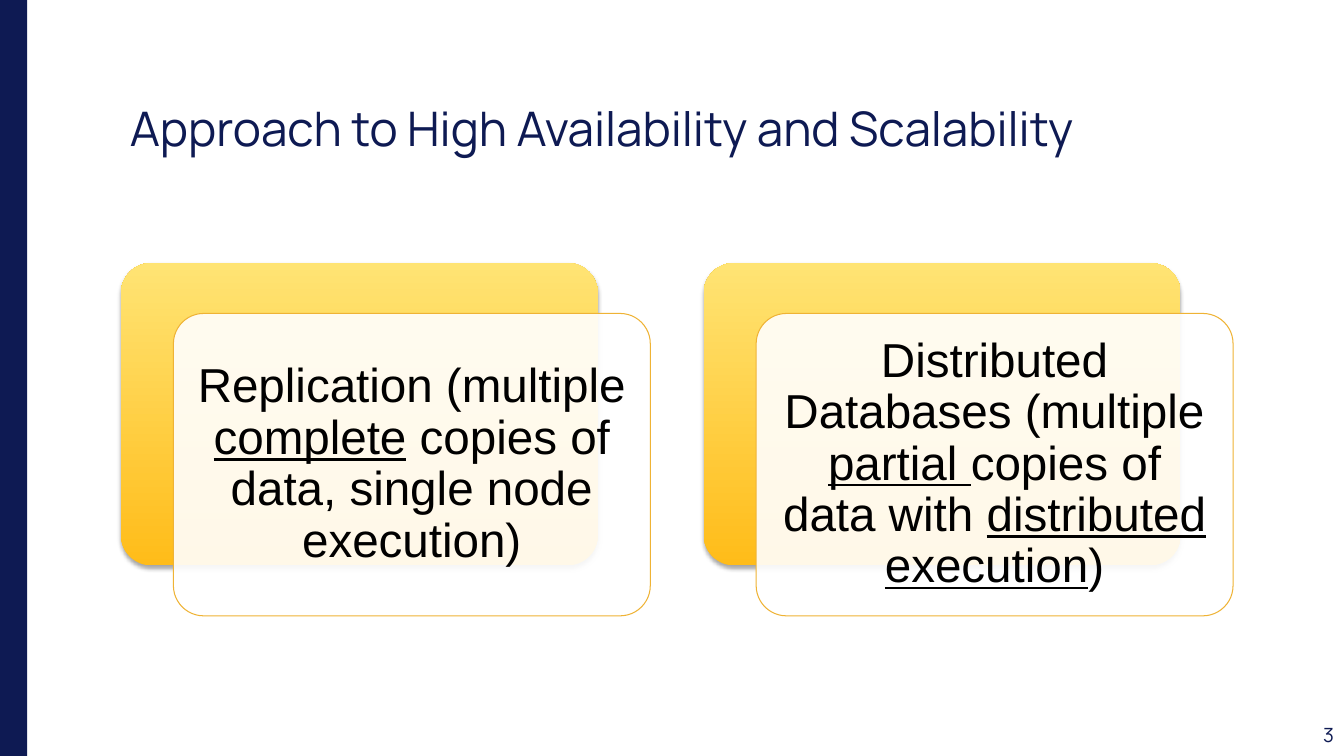
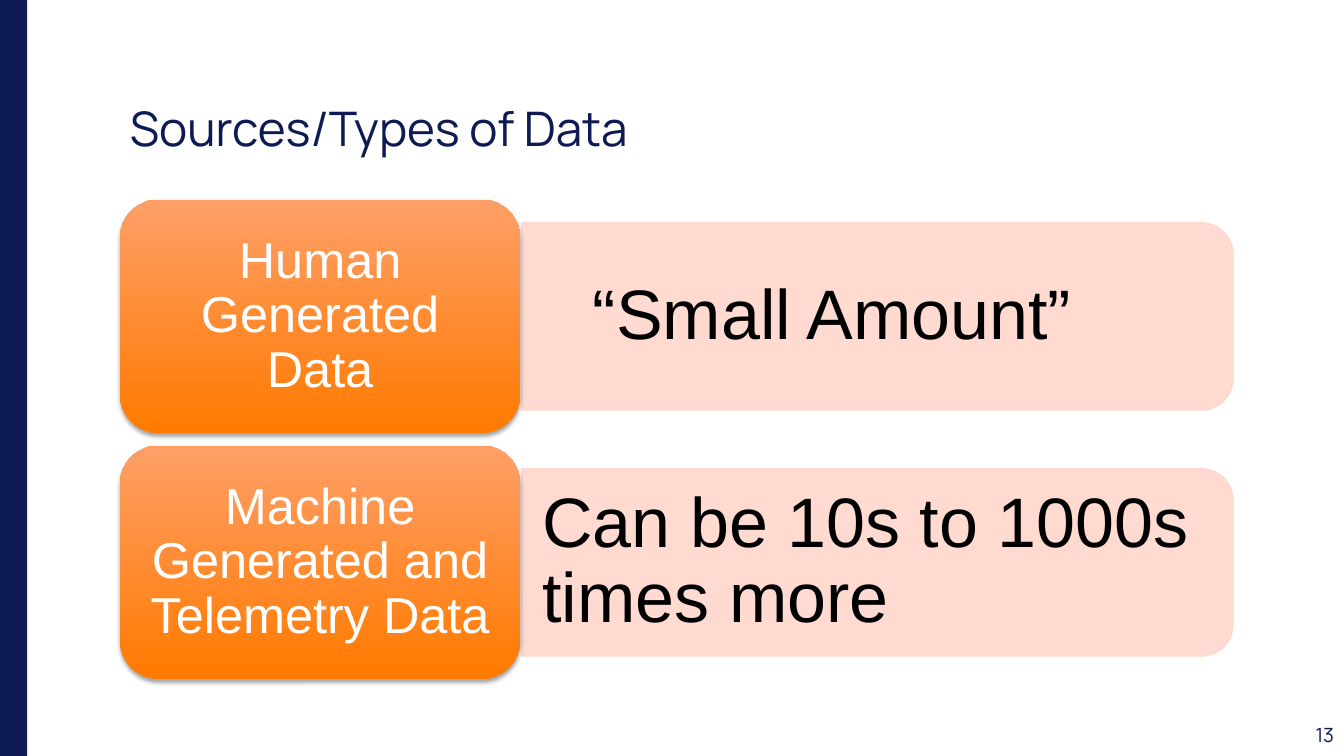
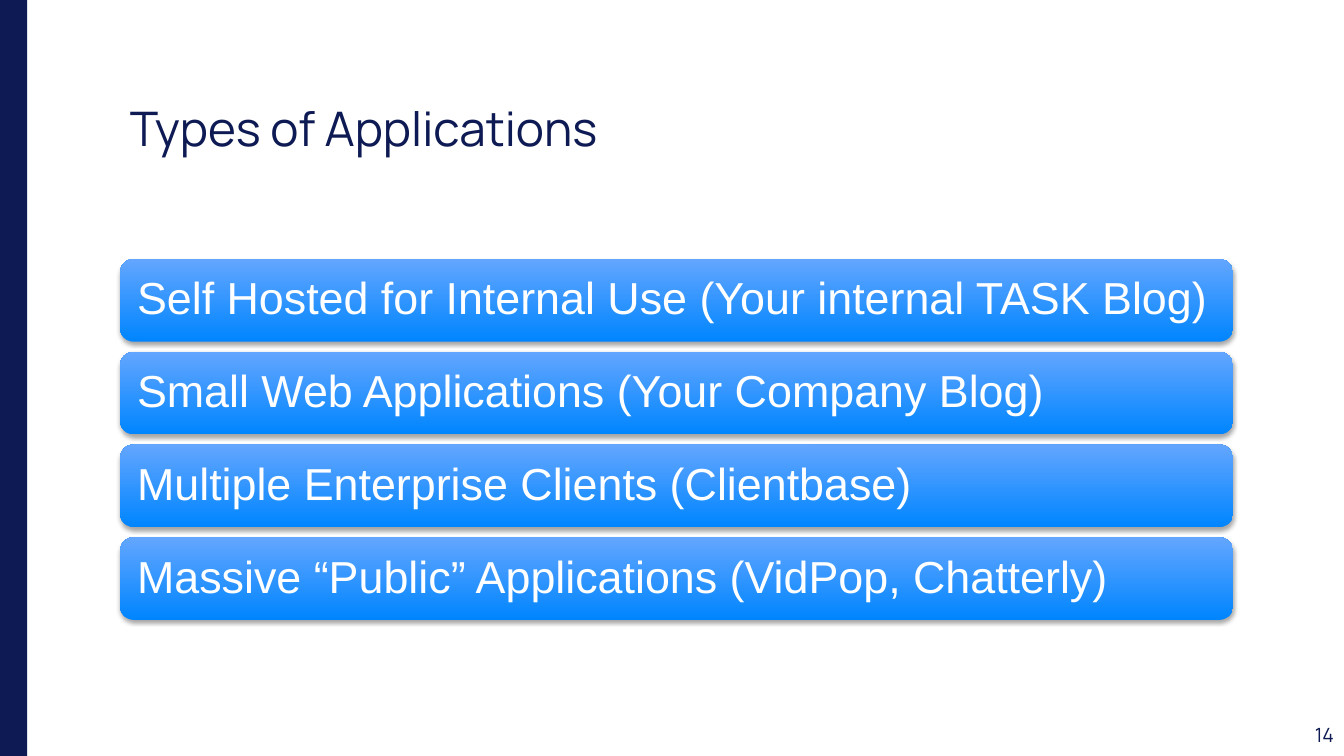
from lxml.etree import SubElement
from pptx import Presentation
from pptx.dml.color import RGBColor
from pptx.enum.shapes import MSO_SHAPE as Shape
from pptx.enum.text import MSO_ANCHOR as Anchor, PP_ALIGN as Align
from pptx.oxml.ns import qn
from pptx.util import Inches, Pt

NAVY = "0E1A53"
WHITE = "FFFFFF"
BLACK = "000000"
PEACH = "FFD7CB"
AMBER_LINE = "EFB335"
AMBER = ("FFBC19", "FFE474")
ORANGE = ("FF7A00", "FF9F67")
BLUE = ("0085FF", "63A6FF")
TITLE_FONT = "Manrope"
BODY_FONT = "Arial"
LEFT = 1.19
CONTENT_WIDTH = 11.04


def color(value):
    return RGBColor.from_string(value)


def set_alpha(color_parent, percent):
    for node in color_parent.iter(qn("a:srgbClr")):
        SubElement(node, qn("a:alpha"), val=str(percent * 1000))


def add_soft_shadow(shape):
    effects = shape.element.spPr.find(qn("a:effectLst"))
    shadow = SubElement(effects, qn("a:outerShdw"), blurRad=str(Pt(3.1)),
                        dist=str(Pt(1.8)), dir="5400000", rotWithShape="0")
    SubElement(shadow, qn("a:srgbClr"), val=BLACK)
    set_alpha(shadow, 35)


def add_block(slide, kind, box, adjustments=(), fill=None, gradient=None, line=None):
    shape = slide.shapes.add_shape(kind, *map(Inches, box))
    for index, value in enumerate(adjustments):
        shape.adjustments[index] = value
    if gradient:
        shape.fill.gradient()
        shape.fill.gradient_angle = 90
        for stop, value in zip(shape.fill.gradient_stops, gradient):
            stop.color.rgb = color(value)
    else:
        shape.fill.solid()
        shape.fill.fore_color.rgb = color(fill)
    if line:
        shape.line.color.rgb = color(line)
        shape.line.width = Pt(0.75)
    else:
        shape.line.fill.background()
    shape.shadow.inherit = False
    if gradient:
        add_soft_shadow(shape)
    return shape


def write(shape, runs, size, value, font=BODY_FONT, align=Align.LEFT,
          insets=(0.1, 0.05), indent=0, space_after=0):
    frame = shape.text_frame
    frame.word_wrap = True
    frame.vertical_anchor = Anchor.MIDDLE
    frame.margin_left = frame.margin_right = Inches(insets[0])
    frame.margin_top = frame.margin_bottom = Inches(insets[1])
    paragraph = frame.paragraphs[0]
    paragraph.alignment = align
    paragraph.line_spacing = 0.9
    paragraph.space_after = Pt(space_after)
    if indent:
        properties = paragraph._p.get_or_add_pPr()
        properties.set("marL", str(Inches(indent)))
        properties.set("indent", "0")
    for text, underlined in runs:
        run = paragraph.add_run()
        run.text = text
        run.font.name = font
        run.font.size = Pt(size)
        run.font.color.rgb = color(value)
        if underlined:
            run.font.underline = True


def add_text(slide, box, text, size, value, **options):
    text_box = slide.shapes.add_textbox(*map(Inches, box))
    write(text_box, [(text, False)], size, value, **options)


def add_slide(presentation, title, number):
    slide = presentation.slides.add_slide(presentation.slide_layouts[6])
    add_block(slide, Shape.RECTANGLE, (-0.07, -0.08, 0.34, 7.67), fill=NAVY)
    add_text(slide, (11.66, 7.1, 1.67, 0.4), number, 14, NAVY,
             font=TITLE_FONT, align=Align.RIGHT, space_after=6)
    add_text(slide, (LEFT, 0.83, CONTENT_WIDTH, 0.94), title, 34, NAVY, font=TITLE_FONT)
    return slide


def add_layered_card(slide, left, runs):
    top, width, height = 2.61, 4.73, 3
    add_block(slide, Shape.ROUNDED_RECTANGLE, (left, top, width, height),
              [0.1], gradient=AMBER)
    front = add_block(slide, Shape.ROUNDED_RECTANGLE,
                      (left + 0.52, top + 0.5, width, height),
                      [0.1], fill=WHITE, line=AMBER_LINE)
    set_alpha(front.element.spPr.find(qn("a:solidFill")), 90)
    write(front, runs, 34, BLACK, align=Align.CENTER, insets=(0.14, 0.14))


def add_source_row(slide, top, label, amount, indent):
    label_width, label_height = 3.97, 2.32
    strip_width, strip_height = 7.06, 1.86
    strip_left = LEFT + label_width + 0.01
    strip_top = top + (label_height - strip_height) / 2
    turn = (strip_width - strip_height) / 2
    strip = add_block(slide, Shape.ROUND_2_SAME_RECTANGLE,
                      (strip_left + turn, strip_top - turn, strip_height, strip_width),
                      [0.167, 0], fill=PEACH, line=PEACH)
    strip.rotation = 90
    set_alpha(strip.element.spPr, 90)
    add_text(slide, (strip_left, strip_top + 0.09, 6.97, 1.68), amount, 50, BLACK,
             insets=(0.21, 0.1), indent=indent)
    card = add_block(slide, Shape.ROUNDED_RECTANGLE,
                     (LEFT, top, label_width, label_height), [0.167], gradient=ORANGE)
    write(card, [(label, False)], 36, WHITE, align=Align.CENTER, insets=(0.15, 0.07))


def add_bar(slide, top, text):
    bar = add_block(slide, Shape.ROUNDED_RECTANGLE, (LEFT, top, CONTENT_WIDTH, 0.82),
                    [0.167], gradient=BLUE)
    write(bar, [(text, False)], 32, WHITE, insets=(0.13, 0.13))


def main():
    presentation = Presentation()
    presentation.slide_width = Inches(13.33)
    presentation.slide_height = Inches(7.5)

    slide = add_slide(presentation, "Approach to High Availability and Scalability", "3")
    approaches = [
        [("Replication (multiple ", False), ("complete", True),
         (" copies of data, single node execution)", False)],
        [("Distributed Databases (multiple", False), (" partial ", True),
         ("copies of data with ", False), ("distributed execution", True), (")", False)],
    ]
    for index, runs in enumerate(approaches):
        add_layered_card(slide, 1.2 + index * 5.78, runs)

    slide = add_slide(presentation, "Sources/Types of Data", "13")
    sources = [
        ("Human Generated Data", "“Small Amount”", 0.5),
        ("Machine Generated and Telemetry Data", "Can be 10s to 1000s times more", 0),
    ]
    for index, source in enumerate(sources):
        add_source_row(slide, 1.98 + index * 2.44, *source)

    slide = add_slide(presentation, "Types of Applications", "14")
    applications = [
        "Self Hosted for Internal Use (Your internal TASK Blog)",
        "Small Web Applications (Your Company Blog)",
        "Multiple Enterprise Clients (Clientbase)",
        "Massive “Public” Applications (VidPop, Chatterly)",
    ]
    for index, application in enumerate(applications):
        add_bar(slide, 2.57 + index * 0.92, application)

    presentation.save("out.pptx")


if __name__ == "__main__":
    main()
